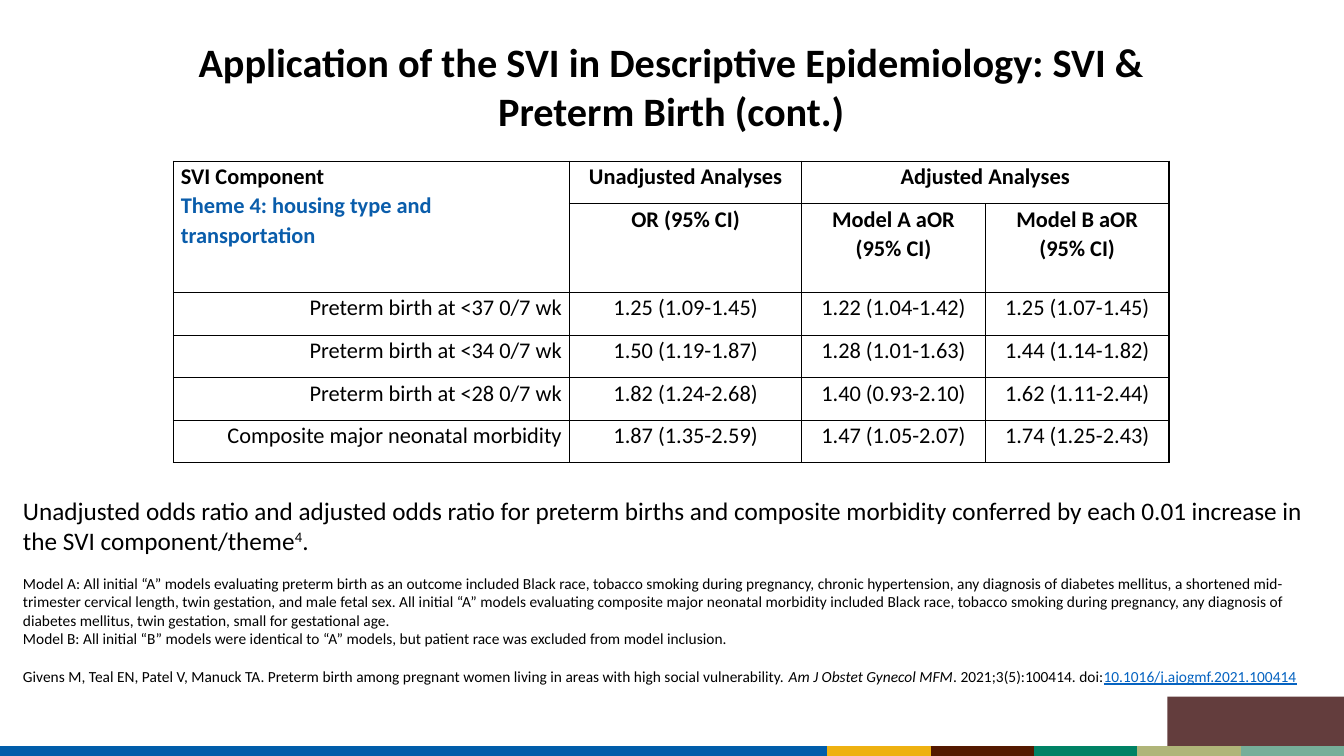
from dataclasses import dataclass

from lxml import etree
from pptx import Presentation, util as u
from pptx.dml.color import RGBColor
from pptx.enum import shapes, text
from pptx.oxml import ns

Pt = u.Pt
ALIGN = text.PP_ALIGN
FONT = "Calibri"
BLACK = "000000"
THEME_BLUE = "0A5DAB"
LINK_BLUE = "0563C1"


@dataclass
class Stripe:
    left: float
    right: float
    color: str


@dataclass
class Piece:
    words: str
    color: str = BLACK
    italic: bool = False
    underline: bool = False
    raised: bool = False


@dataclass
class Note:
    pieces: list[Piece]
    size: float = 11
    space_before: float = 0


def rgb(color: str) -> RGBColor:
    return RGBColor.from_string(color)


def style_font(font, size: float, color: str = BLACK, bold: bool = False) -> None:
    font.name = FONT
    font.size = Pt(size)
    font.bold = bold
    font.color.rgb = rgb(color)


def draw_stripe(slide, stripe: Stripe) -> None:
    line = slide.shapes.add_connector(
        shapes.MSO_CONNECTOR.STRAIGHT,
        Pt(stripe.left), Pt(536.4), Pt(stripe.right), Pt(536.4),
    )
    line.line.color.rgb = rgb(stripe.color)
    line.line.width = Pt(7.5)
    etree.SubElement(line._element.spPr, ns.qn("a:effectLst"))


def draw_corner(slide) -> None:
    corner = slide.shapes.add_shape(
        shapes.MSO_SHAPE.RECTANGLE, Pt(833.8), Pt(497.5), Pt(126.2), Pt(35.3)
    )
    corner.shadow.inherit = False
    corner.fill.solid()
    corner.fill.fore_color.rgb = rgb("633D3D")
    corner.line.fill.background()


def draw_title(slide, words: str) -> None:
    title = slide.shapes.add_textbox(Pt(123.84), Pt(22.3), Pt(711.4), Pt(77.8))
    frame = title.text_frame
    frame.word_wrap = True
    frame.vertical_anchor = text.MSO_ANCHOR.MIDDLE
    frame.text = words
    frame.paragraphs[0].alignment = ALIGN.CENTER
    style_font(frame.paragraphs[0].runs[0].font, 28.8, bold=True)


def outline_cell(cell) -> None:
    properties = cell._tc.get_or_add_tcPr()
    for side in ("a:lnL", "a:lnR", "a:lnT", "a:lnB"):
        border = etree.SubElement(properties, ns.qn(side), w=str(Pt(1)))
        fill = etree.SubElement(border, ns.qn("a:solidFill"))
        etree.SubElement(fill, ns.qn("a:srgbClr"), val=BLACK)


def fill_cell(cell, words: str, align: ALIGN, bold: bool) -> None:
    outline_cell(cell)
    cell.fill.background()
    cell.margin_left = cell.margin_right = Pt(5.4)
    cell.margin_top = cell.margin_bottom = Pt(0)
    cell.text_frame.text = words
    for paragraph in cell.text_frame.paragraphs:
        paragraph.alignment = align
        paragraph.line_spacing = 1.07
        style_font(paragraph.font, 16)
        for run in paragraph.runs:
            color = THEME_BLUE if run.text.startswith("Theme") else BLACK
            style_font(run.font, 16, color, bold)


def draw_results(slide, rows: list[list[str]]) -> None:
    widths = [283, 165.8, 131.2, 131.2]
    heights = [30.4, 63.5] + [30.4] * 4
    results = slide.shapes.add_table(
        len(heights), len(widths),
        Pt(123.84), Pt(115.2), Pt(sum(widths)), Pt(sum(heights)),
    ).table
    results.first_row = results.horz_banding = False
    for column, width in zip(results.columns, widths):
        column.width = Pt(width)
    for row, height in zip(results.rows, heights):
        row.height = Pt(height)
    for row_index, row in enumerate(rows):
        header = row_index < 2
        for column_index, words in enumerate(row):
            label_align = ALIGN.LEFT if header else ALIGN.RIGHT
            align = ALIGN.CENTER if column_index else label_align
            fill_cell(results.cell(row_index, column_index), words, align, header)
    results.cell(0, 0).merge(results.cell(1, 0))
    results.cell(0, 2).merge(results.cell(0, 3))


def draw_notes(slide, notes: list[Note]) -> None:
    box = slide.shapes.add_textbox(Pt(9.36), Pt(349.9), Pt(950.4), Pt(179.3))
    frame = box.text_frame
    frame.word_wrap = True
    for index, note in enumerate(notes):
        paragraph = frame.add_paragraph() if index else frame.paragraphs[0]
        if note.space_before:
            paragraph.space_before = Pt(note.space_before)
        for piece in note.pieces:
            run = paragraph.add_run()
            run.text = piece.words
            style_font(run.font, note.size, piece.color)
            run.font.italic = piece.italic
            run.font.underline = piece.underline
            if piece.raised:
                run._r.get_or_add_rPr().set("baseline", "30000")


STRIPE_START, STRIPE_STEP = 591, 73.8
STRIPES = [Stripe(0, STRIPE_START, "005DAA")] + [
    Stripe(STRIPE_START + i * STRIPE_STEP, STRIPE_START + (i + 1) * STRIPE_STEP, color)
    for i, color in enumerate(["EEB111", "541900", "008265", "B0B579", "76AE99"])
]

RESULTS = [
    ["SVI Component\nTheme 4: housing type and transportation",
     "Unadjusted Analyses", "Adjusted Analyses", ""],
    ["", "OR (95% CI)", "Model A aOR (95% CI)", "Model B aOR (95% CI)"],
    ["Preterm birth at <37 0/7 wk",
     "1.25 (1.09-1.45)", "1.22 (1.04-1.42)", "1.25 (1.07-1.45)"],
    ["Preterm birth at <34 0/7 wk",
     "1.50 (1.19-1.87)", "1.28 (1.01-1.63)", "1.44 (1.14-1.82)"],
    ["Preterm birth at <28 0/7 wk",
     "1.82 (1.24-2.68)", "1.40 (0.93-2.10)", "1.62 (1.11-2.44)"],
    ["Composite major neonatal morbidity",
     "1.87 (1.35-2.59)", "1.47 (1.05-2.07)", "1.74 (1.25-2.43)"],
]

NOTES = [
    Note([
        Piece("Unadjusted odds ratio and adjusted odds ratio for preterm births and "
              "composite morbidity conferred by each 0.01 increase in the SVI "
              "component/theme"),
        Piece("4", raised=True),
        Piece("."),
    ], size=18),
    Note([Piece(
        "Model A: All initial “A” models evaluating preterm birth as an outcome "
        "included Black race, tobacco smoking during pregnancy, chronic hypertension, "
        "any diagnosis of diabetes mellitus, a shortened mid-trimester cervical "
        "length, twin gestation, and male fetal sex. All initial “A” models evaluating "
        "composite major neonatal morbidity included Black race, tobacco smoking "
        "during pregnancy, any diagnosis of diabetes mellitus, twin gestation, small "
        "for gestational age."
    )], space_before=13.4),
    Note([Piece("Model B: All initial “B” models were identical to “A” models, but "
                "patient race was excluded from model inclusion.")]),
    Note([
        Piece("Givens M, Teal EN, Patel V, Manuck TA. Preterm birth among pregnant "
              "women living in areas with high social vulnerability. "),
        Piece("Am J Obstet Gynecol MFM", italic=True),
        Piece(". 2021;3(5):100414. doi:"),
        Piece("10.1016/j.ajogmf.2021.100414", LINK_BLUE, underline=True),
    ], space_before=13.4),
]


def main() -> None:
    deck = Presentation()
    deck.slide_width, deck.slide_height = Pt(960), Pt(540)
    slide = deck.slides.add_slide(deck.slide_layouts[6])
    for stripe in STRIPES:
        draw_stripe(slide, stripe)
    draw_corner(slide)
    draw_title(slide, "Application of the SVI in Descriptive Epidemiology: "
                      "SVI & Preterm Birth (cont.)")
    draw_results(slide, RESULTS)
    draw_notes(slide, NOTES)
    deck.save("out.pptx")


if __name__ == "__main__":
    main()
